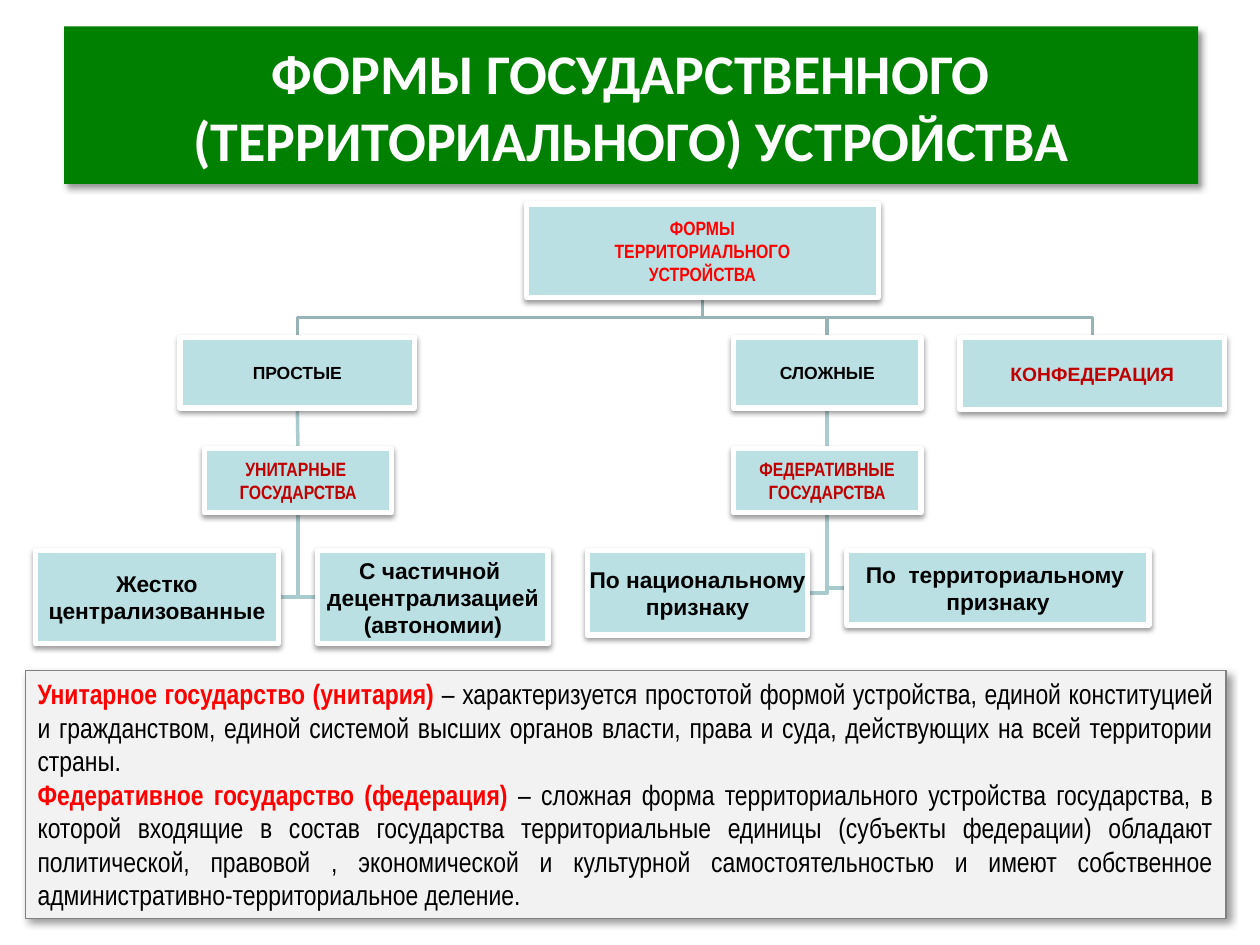
from dataclasses import dataclass

from lxml.etree import SubElement
from pptx import Presentation
from pptx.dml.color import RGBColor
from pptx.enum.shapes import MSO_CONNECTOR as Link, MSO_SHAPE as Preset
from pptx.enum.text import MSO_ANCHOR as Anchor, PP_ALIGN as Align
from pptx.oxml.ns import qn
from pptx.util import Inches, Pt


@dataclass(frozen=True)
class Theme:
    banner: str = "008000"
    box: str = "BBE0E3"
    panel: str = "F2F2F2"
    panel_line: str = "808080"
    branch: str = "96B3B6"
    twig: str = "AACBCE"
    white: str = "FFFFFF"
    black: str = "000000"
    red: str = "FF0000"
    dark_red: str = "C00000"
    sans: str = "Arial"
    narrow: str = "Arial Narrow"
    heading: str = "Calibri"
    title_size: int = 32
    body_size: int = 16
    leaf_size: int = 13
    label_size: int = 11
    small_size: int = 10


THEME = Theme()
BOX_SHADOW = dict(alpha=38, blur=3.1, distance=1.6, angle=90)
FRAME_SHADOW = dict(alpha=40, blur=4, distance=3, angle=45)


def rgb(color):
    return RGBColor.from_string(color)


def add_shadow(shape, alpha, blur, distance, angle):
    shape.shadow.inherit = False
    effects = shape._element.spPr.find(qn("a:effectLst"))
    outer = SubElement(effects, qn("a:outerShdw"), blurRad=str(Pt(blur)),
                       dist=str(Pt(distance)), dir=str(angle * 60000),
                       algn="ctr", rotWithShape="0")
    color = SubElement(outer, qn("a:srgbClr"), val=THEME.black)
    SubElement(color, qn("a:alpha"), val=str(alpha * 1000))


def add_panel(slide, place, fill, shadow, line=None, width=0):
    panel = slide.shapes.add_shape(Preset.RECTANGLE, *map(Inches, place))
    panel.fill.solid()
    panel.fill.fore_color.rgb = rgb(fill)
    if line:
        panel.line.color.rgb = rgb(line)
        panel.line.width = Pt(width)
    else:
        panel.line.fill.background()
    add_shadow(panel, **shadow)
    return panel


def write(shape, paragraphs, *, size, font, color=None, align=Align.CENTER,
          anchor=Anchor.MIDDLE, wrap=True, inset=None):
    """Fill a shape; a paragraph is bold text or a list of (text, color, bold)."""
    frame = shape.text_frame
    frame.word_wrap = wrap
    frame.vertical_anchor = anchor
    if inset is not None:
        frame.margin_left = frame.margin_right = Inches(inset)
        frame.margin_top = frame.margin_bottom = Inches(inset)
    for index, content in enumerate(paragraphs):
        paragraph = frame.add_paragraph() if index else frame.paragraphs[0]
        paragraph.alignment = align
        pieces = [(content, color, True)] if isinstance(content, str) else content
        for text, ink, bold in pieces:
            run = paragraph.add_run()
            run.text = text
            run.font.name = font
            run.font.size = Pt(size)
            run.font.bold = bold
            run.font.color.rgb = rgb(ink)


def add_box(slide, place, lines, **text_format):
    box = add_panel(slide, place, THEME.box, BOX_SHADOW, THEME.white, 3)
    write(box, lines, wrap=False, inset=0.01, **text_format)
    return box


def style_link(link, color):
    """Colour a link and place it behind the boxes."""
    link.line.color.rgb = rgb(color)
    link.line.width = Pt(2)
    link._element.getparent().insert(2, link._element)


def add_path(slide, points, color):
    builder = slide.shapes.build_freeform(*points[0], scale=1.0)
    builder.add_line_segments(points[1:], close=False)
    path = builder.convert_to_shape()
    path.fill.background()
    path.shadow.inherit = False
    style_link(path, color)


def center_x(box):
    return box.left + box.width // 2


def link_branch(slide, parent, child):
    """Go down, across and down again, turning midway between the boxes."""
    bottom = parent.top + parent.height
    turn = (bottom + child.top) // 2
    start, end = center_x(parent), center_x(child)
    add_path(slide, [(start, bottom), (start, turn), (end, turn),
                     (end, child.top)], THEME.branch)


def link_straight(slide, parent, child):
    link = slide.shapes.add_connector(Link.STRAIGHT, 0, 0, 0, 0)
    link.begin_connect(parent, 2)
    link.end_connect(child, 0)
    SubElement(link._element.spPr, qn("a:effectLst"))
    style_link(link, THEME.twig)


def link_leaf(slide, parent, leaf):
    """Go down from the parent and across to the nearer side of the leaf."""
    stem = center_x(parent)
    level = leaf.top + leaf.height // 2
    side = leaf.left if leaf.left > stem else leaf.left + leaf.width
    add_path(slide, [(stem, parent.top + parent.height), (stem, level),
                     (side, level)], THEME.twig)


def add_tree(slide):
    small = dict(size=THEME.small_size, font=THEME.sans, color=THEME.black)
    label = dict(size=THEME.label_size, font=THEME.narrow, color=THEME.dark_red)
    leaf_format = dict(size=THEME.leaf_size, font=THEME.sans, color=THEME.black)

    root = add_box(slide, (4.18, 1.62, 2.79, 0.74),
                   ["ФОРМЫ", "ТЕРРИТОРИАЛЬНОГО", "УСТРОЙСТВА"],
                   **{**label, "color": THEME.red})
    confederation = add_box(slide, (7.62, 2.68, 2.1, 0.57), ["КОНФЕДЕРАЦИЯ"],
                            **{**label, "font": THEME.sans})
    link_branch(slide, root, confederation)

    branches = [
        ("ПРОСТЫЕ", (1.43, 2.68, 1.86, 0.56),
         ["УНИТАРНЫЕ ", "ГОСУДАРСТВА"], (1.62, 3.56, 1.49, 0.51),
         [((0.28, 4.37, 1.93, 0.74), ["Жестко", "централизованные"]),
          ((2.52, 4.37, 1.83, 0.74),
           ["С частичной ", "децентрализацией", "(автономии)"])]),
        ("СЛОЖНЫЕ", (5.82, 2.68, 1.49, 0.56),
         ["ФЕДЕРАТИВНЫЕ", "ГОСУДАРСТВА"], (5.82, 3.56, 1.49, 0.51),
         [((4.66, 4.37, 1.75, 0.67), ["По национальному", "признаку"]),
          ((6.72, 4.37, 2.4, 0.59), ["По  территориальному ", "признаку"])]),
    ]
    for group_name, group_place, state_lines, state_place, leaves in branches:
        group = add_box(slide, group_place, [group_name], **small)
        state = add_box(slide, state_place, state_lines, **label)
        link_branch(slide, root, group)
        link_straight(slide, group, state)
        for leaf_place, leaf_lines in leaves:
            leaf = add_box(slide, leaf_place, leaf_lines, **leaf_format)
            link_leaf(slide, state, leaf)


def add_definitions(slide):
    definitions = [
        ("Унитарное государство (унитария) ",
         "– характеризуется простотой формой устройства, единой конституцией "
         "и гражданством, единой системой высших органов власти, права и суда, "
         "действующих на всей территории страны."),
        ("Федеративное государство (федерация) ",
         "– сложная форма территориального устройства государства, в которой "
         "входящие в состав государства территориальные единицы (субъекты "
         "федерации) обладают политической, правовой , экономической и "
         "культурной самостоятельностью и имеют собственное "
         "административно-территориальное деление."),
    ]
    panel = add_panel(slide, (0.2, 5.32, 9.53, 1.97), THEME.panel, FRAME_SHADOW,
                      THEME.panel_line, 0.75)
    write(panel, [[(term, THEME.red, True), (meaning, THEME.black, False)]
                  for term, meaning in definitions],
          size=THEME.body_size, font=THEME.narrow,
          align=Align.JUSTIFY, anchor=Anchor.TOP)


def main():
    deck = Presentation()
    deck.slide_width, deck.slide_height = Inches(10), Inches(7.5)
    slide = deck.slides.add_slide(deck.slide_layouts[6])
    banner = add_panel(slide, (0.51, 0.21, 9, 1.25), THEME.banner, FRAME_SHADOW)
    write(banner, ["ФОРМЫ ГОСУДАРСТВЕННОГО (ТЕРРИТОРИАЛЬНОГО) УСТРОЙСТВА"],
          size=THEME.title_size, font=THEME.heading, color=THEME.white)
    add_tree(slide)
    add_definitions(slide)
    deck.save("out.pptx")


if __name__ == "__main__":
    main()
